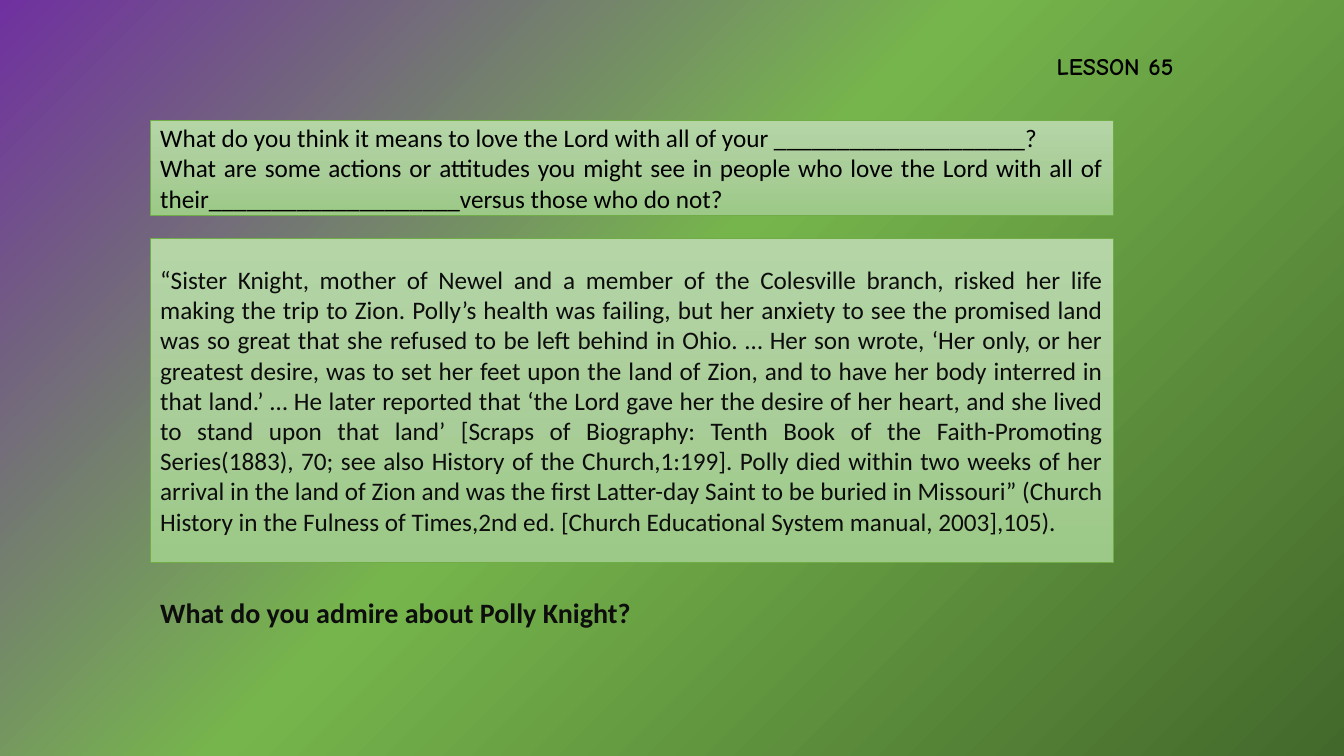
from copy import deepcopy
from dataclasses import dataclass

from pptx import Presentation
from pptx.dml.color import RGBColor
from pptx.enum.shapes import MSO_SHAPE
from pptx.enum.text import MSO_ANCHOR, MSO_AUTO_SIZE, PP_ALIGN
from pptx.oxml.ns import qn
from pptx.util import Inches, Pt

RECT = MSO_SHAPE.RECTANGLE
TOP, MIDDLE = MSO_ANCHOR.TOP, MSO_ANCHOR.MIDDLE
LEFT, JUSTIFY = PP_ALIGN.LEFT, PP_ALIGN.JUSTIFY
NO_FIT, GROW = MSO_AUTO_SIZE.NONE, MSO_AUTO_SIZE.SHAPE_TO_FIT_TEXT
TITLE_ONLY = 5


@dataclass(frozen=True)
class Theme:
    back: tuple = ((0, "7030A0"), (0.46, "76B54C"), (1, "43682B"))
    panel: tuple = ((0, "B5D5A7"), (0.5, "AACE9A"), (1, "9CC987"))
    edge: str = "70AD47"
    black: str = "000000"
    ink: str = "0D0D0D"
    font: str = "Calibri"
    head_font: str = "Comic Neue"
    head: int = 17
    body: int = 18
    ask: int = 20


@dataclass(frozen=True)
class Style:
    font: str
    size: int
    color: str
    bold: bool = False
    align: int = LEFT
    before: int = 0


@dataclass(frozen=True)
class Panel:
    top: float
    height: float
    color: str
    paras: tuple


THEME = Theme()
MARGIN, WIDTH = 1.49, 9.55

ASKS = (
    ("What do you think it means to love the Lord with all of your "
     "____________________? ",),
    ("What are some actions or attitudes you might see in people who love "
     "the Lord with all of their____________________versus those who do not?",),
)

QUOTE = (
    "“Sister Knight, mother of Newel and a member of the Colesville branch, "
    "risked her life making the trip to Zion. Polly’s health was failing, "
    "but her anxiety to see the promised land was so great that she refused "
    "to be left behind in Ohio. … ",
    "Her son wrote, ‘Her only, or her greatest desire, was to set her feet "
    "upon the land of Zion, and to have her body interred in that land.’ … "
    "He later reported that ‘the Lord gave her the desire of her heart, and "
    "she lived to stand upon that land’ ",
    "[Scraps of Biography: Tenth Book of the Faith-Promoting Series(1883), "
    "70; see also History of the Church,1:199]. ",
    "Polly died within two weeks of her arrival in the land of Zion and was "
    "the first Latter-day Saint to be buried in Missouri” ",
    "(Church History in the Fulness of Times,2nd ed. [Church Educational "
    "System manual, 2003],105).",
)

PANELS = (
    Panel(1.19, 0.95, THEME.black, ASKS),
    Panel(2.36, 3.22, THEME.ink, (QUOTE,)),
)


def blend(fill, owner, stops: tuple, angle: int) -> None:
    fill.gradient()
    fill.gradient_angle = angle
    group = owner.element.find(".//" + qn("a:gsLst"))
    group.append(deepcopy(group[0]))
    for stop, (place, color) in zip(fill.gradient_stops, stops):
        stop.position = place
        stop.color.rgb = RGBColor.from_string(color)


def write(frame, paras: tuple, style: Style) -> None:
    for index, parts in enumerate(paras):
        para = frame.add_paragraph() if index else frame.paragraphs[0]
        para.alignment = style.align
        para.space_before = Pt(style.before)
        for part in parts:
            run = para.add_run()
            run.text = part
            run.font.name = style.font
            run.font.size = Pt(style.size)
            run.font.bold = style.bold
            run.font.color.rgb = RGBColor.from_string(style.color)


def add_head(slide) -> None:
    title = slide.shapes.title
    title.left, title.top = Inches(10.38), Inches(0.46)
    title.width, title.height = Inches(1.71), Inches(0.51)
    frame = title.text_frame
    frame.word_wrap = True
    frame.auto_size = NO_FIT
    frame.vertical_anchor = TOP
    style = Style(THEME.head_font, THEME.head, THEME.black, bold=True, before=10)
    write(frame, (("LESSON 65",),), style)


def add_panel(slide, panel: Panel) -> None:
    box = slide.shapes.add_shape(
        RECT, Inches(MARGIN), Inches(panel.top), Inches(WIDTH), Inches(panel.height))
    box.shadow.inherit = False
    blend(box.fill, box, THEME.panel, 270)
    box.line.color.rgb = RGBColor.from_string(THEME.edge)
    box.line.width = Pt(0.5)
    frame = box.text_frame
    frame.word_wrap = True
    frame.vertical_anchor = MIDDLE
    write(frame, panel.paras,
          Style(THEME.font, THEME.body, panel.color, align=JUSTIFY))


def add_ask(slide) -> None:
    box = slide.shapes.add_textbox(
        Inches(MARGIN), Inches(5.86), Inches(4.91), Inches(0.44))
    frame = box.text_frame
    frame.word_wrap = False
    frame.auto_size = GROW
    write(frame, (("What do you admire about Polly Knight?",),),
          Style(THEME.font, THEME.ask, THEME.ink, bold=True))


def main() -> None:
    deck = Presentation()
    deck.slide_width, deck.slide_height = Inches(13.33), Inches(7.5)
    slide = deck.slides.add_slide(deck.slide_layouts[TITLE_ONLY])
    blend(slide.background.fill, slide, THEME.back, 315)
    add_head(slide)
    for panel in PANELS:
        add_panel(slide, panel)
    add_ask(slide)
    deck.save("out.pptx")


if __name__ == "__main__":
    main()
